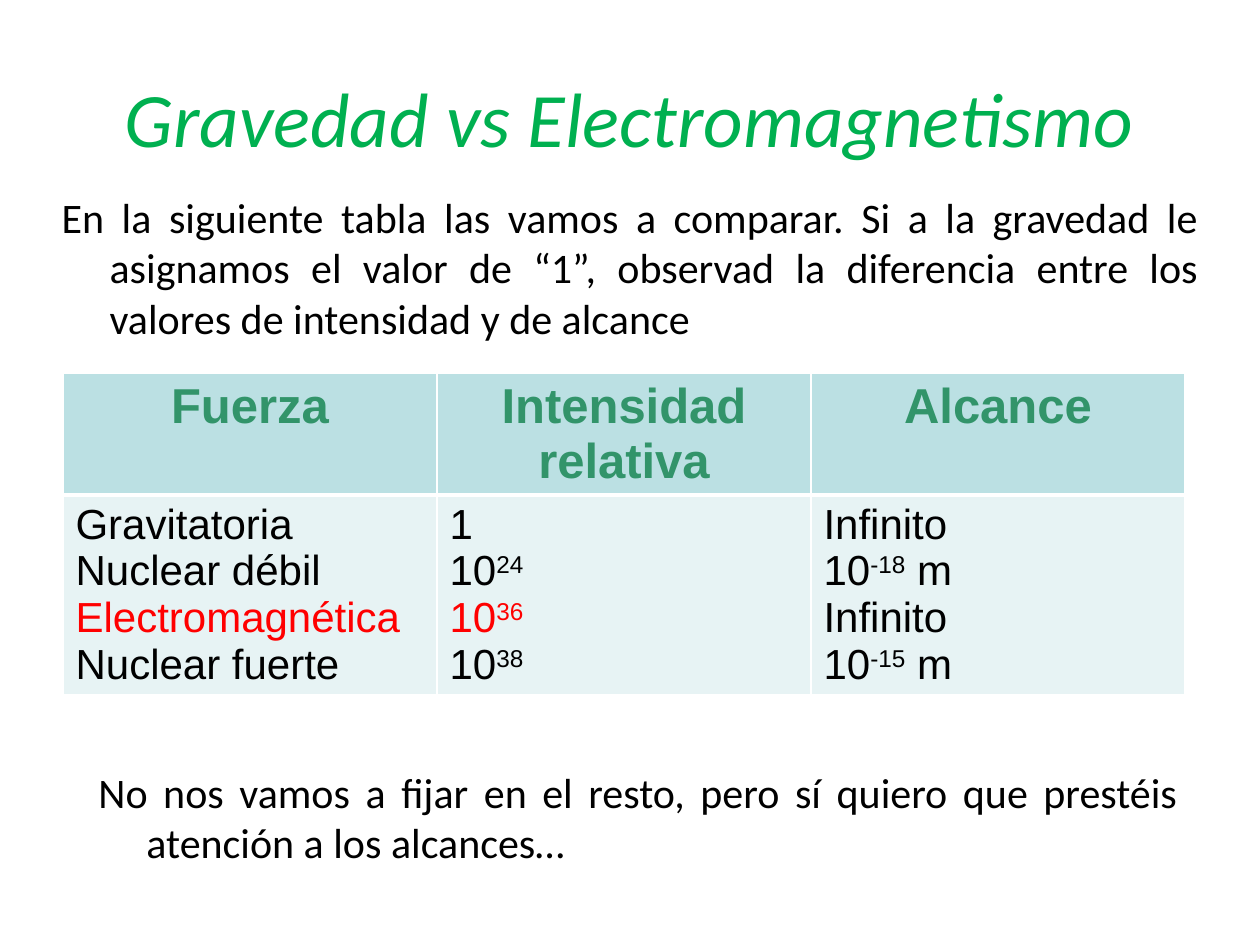
from dataclasses import dataclass

from lxml import etree
from pptx import Presentation
from pptx.dml.color import RGBColor
from pptx.enum.text import MSO_ANCHOR, MSO_AUTO_SIZE, PP_ALIGN
from pptx.oxml.ns import qn
from pptx.util import Emu, Pt

LEFT, CENTER, JUSTIFY = PP_ALIGN.LEFT, PP_ALIGN.CENTER, PP_ALIGN.JUSTIFY
MIDDLE = MSO_ANCHOR.MIDDLE
NO_FIT = MSO_AUTO_SIZE.NONE
PX_PER_INCH = 126


@dataclass(frozen=True)
class Theme:
    text_font: str = "Calibri"
    table_font: str = "Arial"
    title_size: int = 44
    header_size: int = 28
    text_size: int = 24
    title: str = "00B050"
    text: str = "000000"
    header: str = "32946A"
    highlight: str = "FF0000"
    header_fill: str = "BBE0E3"
    body_fill: str = "E7F3F4"
    border: str = "FFFFFF"


THEME = Theme()

TITLE = "Gravedad vs Electromagnetismo"
INTRO = ("En la siguiente tabla las vamos a comparar. Si a la gravedad le "
         "asignamos el valor de “1”, observad la diferencia entre los "
         "valores de intensidad y de alcance")
CLOSING = ("No nos vamos a fijar en el resto, pero sí quiero que prestéis "
           "atención a los alcances…")
HEADERS = ["Fuerza", "Intensidad relativa", "Alcance"]
# One list per column; each line is (base, exponent, unit)
COLUMNS = [
    [("Gravitatoria",), ("Nuclear débil",), ("Electromagnética",),
     ("Nuclear fuerte",)],
    [("1",), ("10", "24"), ("10", "36"), ("10", "38")],
    [("Infinito",), ("10", "-18", " m"), ("Infinito",), ("10", "-15", " m")],
]
HIGHLIGHTED = {(0, 2), (1, 2)}  # (column, line)


def px(n):
    return Emu(round(n * 914400 / PX_PER_INCH))


def place(shape, box):
    shape.left, shape.top, shape.width, shape.height = map(px, box)


def set_font(font, name, size, color, bold=False, italic=False):
    font.name, font.size = name, Pt(size)
    font.bold, font.italic = bold, italic
    font.color.rgb = RGBColor.from_string(color)


def add_title(s, box):
    sp = s.shapes.title
    place(sp, box)
    tf = sp.text_frame
    tf.text = TITLE
    tf.vertical_anchor, tf.auto_size = MIDDLE, NO_FIT
    p = tf.paragraphs[0]
    p.alignment = CENTER
    set_font(p.font, THEME.text_font, THEME.title_size, THEME.title,
             italic=True)


def fill_hanging_text(sp, box, text):
    """Justified paragraph with a hanging indent and no bullet."""
    place(sp, box)
    tf = sp.text_frame
    tf.text = text
    tf.word_wrap, tf.auto_size = True, NO_FIT
    p = tf.paragraphs[0]
    p.alignment, p.space_before = JUSTIFY, Pt(8)
    set_font(p.font, THEME.text_font, THEME.text_size, THEME.text)
    pPr = p._p.get_or_add_pPr()
    hang = px(48)
    pPr.set("marL", str(hang))
    pPr.set("indent", str(-hang))
    bullet = etree.Element(qn("a:buNone"))
    pPr.find(qn("a:defRPr")).addprevious(bullet)


def style_cell(cell, fill, top, bottom):
    tcPr = cell._tc.get_or_add_tcPr()
    for side, width in (("L", 1), ("R", 1), ("T", top), ("B", bottom)):
        ln = etree.SubElement(tcPr, qn(f"a:ln{side}"), w=str(Pt(width)))
        solid = etree.SubElement(ln, qn("a:solidFill"))
        etree.SubElement(solid, qn("a:srgbClr"), val=THEME.border)
    cell.fill.solid()
    cell.fill.fore_color.rgb = RGBColor.from_string(fill)


def add_line(p, parts, align, size, color, bold=False):
    p.alignment = align
    for i, text in enumerate(parts):
        r = p.add_run()
        r.text = text
        set_font(r.font, THEME.table_font, size, color, bold)
        if i == 1:  # exponent
            r._r.get_or_add_rPr().set("baseline", "30000")


def add_force_table(s, box):
    row_heights = (121, box[3] - 121)
    table = s.shapes.add_table(2, len(HEADERS), *map(px, box)).table
    table.first_row = table.horz_banding = False
    for row, height in zip(table.rows, row_heights):
        row.height = px(height)
    for c, (header, lines) in enumerate(zip(HEADERS, COLUMNS)):
        table.columns[c].width = px(box[2] / len(HEADERS))
        # Header cell
        cell = table.cell(0, c)
        style_cell(cell, THEME.header_fill, top=1, bottom=3)
        add_line(cell.text_frame.paragraphs[0], [header], CENTER,
                 THEME.header_size, THEME.header, bold=True)
        # Body cell
        cell = table.cell(1, c)
        style_cell(cell, THEME.body_fill, top=3, bottom=1)
        tf = cell.text_frame
        for i, parts in enumerate(lines):
            p = tf.paragraphs[0] if i == 0 else tf.add_paragraph()
            color = THEME.highlight if (c, i) in HIGHLIGHTED else THEME.text
            add_line(p, parts, LEFT, THEME.text_size, color)


def main():
    prs = Presentation()
    prs.slide_width, prs.slide_height = px(1260), px(945)
    s = prs.slides.add_slide(prs.slide_layouts[1])
    fill_hanging_text(s.placeholders[1], (49, 185, 1162, 622), INTRO)
    add_title(s, (63, 18, 1133, 198))
    add_force_table(s, (63, 373, 1122, 320))
    box = (86, 760, 1104, 115)
    fill_hanging_text(s.shapes.add_textbox(*map(px, box)), box, CLOSING)
    prs.save("out.pptx")


if __name__ == "__main__":
    main()
